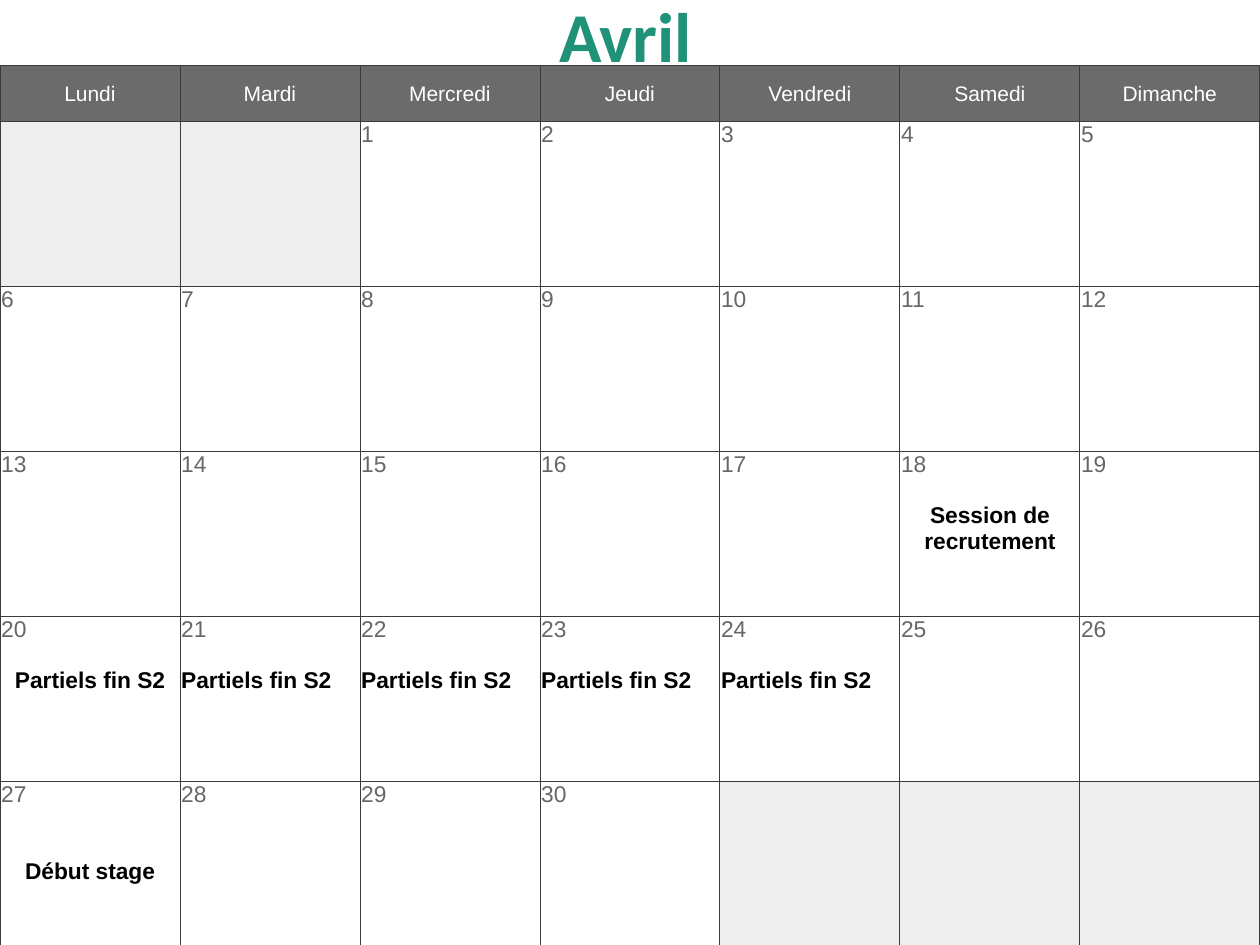
"""Build a one-slide monthly calendar for April."""
import lxml.etree
import pptx
import pptx.dml.color
import pptx.enum.text
import pptx.oxml.ns
import pptx.util

Inches = pptx.util.Inches
Pt = pptx.util.Pt
ALIGN = pptx.enum.text.PP_ALIGN
ANCHOR = pptx.enum.text.MSO_ANCHOR
COLORS = {
    "title": "209277",
    "header": "6B6B6B",
    "header_text": "FFFFFF",
    "day": "FFFFFF",
    "outside": "EEEEEE",
    "number": "676767",
    "event": "000000",
    "border": "3B3B3B",
}
WEEKDAYS = ["Lundi", "Mardi", "Mercredi", "Jeudi", "Vendredi", "Samedi", "Dimanche"]
WEEKS = 5
FIRST_COLUMN = 2
LAST_DAY = 30
LINE_HEIGHT = 14.5
EVENTS = {
    18: ("Session de recrutement", ALIGN.CENTER, 1),
    20: ("Partiels fin S2", ALIGN.CENTER, 1),
    **{day: ("Partiels fin S2", ALIGN.LEFT, 1) for day in range(21, 25)},
    27: ("Début stage", ALIGN.CENTER, 2),
}


def rgb(name):
    return pptx.dml.color.RGBColor.from_string(COLORS[name])


def add_run(paragraph, text, size, color, bold=False, font="Arial"):
    run = paragraph.add_run()
    run.text = text
    run.font.name = font
    run.font.size = Pt(size)
    run.font.bold = bold
    run.font.color.rgb = rgb(color)


def add_title(slide, text):
    title = slide.shapes.title
    title.left, title.top = Inches(4.33), Inches(-0.11)
    title.width, title.height = Inches(1.27), Inches(0.77)
    frame = title.text_frame
    frame.word_wrap = False
    frame.auto_size = pptx.enum.text.MSO_AUTO_SIZE.SHAPE_TO_FIT_TEXT
    frame.vertical_anchor = ANCHOR.TOP
    paragraph = frame.paragraphs[0]
    paragraph.alignment = ALIGN.CENTER
    add_run(paragraph, text, 40, "title", True, "Calibri")


def set_borders(cell):
    properties = cell._tc.get_or_add_tcPr()
    qn = pptx.oxml.ns.qn
    for index, side in enumerate(("lnL", "lnR", "lnT", "lnB")):
        line = lxml.etree.Element(qn(f"a:{side}"), w=str(Pt(0.5)))
        fill = lxml.etree.SubElement(line, qn("a:solidFill"))
        lxml.etree.SubElement(fill, qn("a:srgbClr"), val=COLORS["border"])
        properties.insert(index, line)


def format_cell(cell, fill):
    cell.margin_left = cell.margin_right = cell.margin_top = Inches(0.01)
    cell.margin_bottom = 0
    cell.fill.solid()
    cell.fill.fore_color.rgb = rgb(fill)
    set_borders(cell)


def fill_header(cell, weekday):
    format_cell(cell, "header")
    cell.vertical_anchor = ANCHOR.MIDDLE
    paragraph = cell.text_frame.paragraphs[0]
    paragraph.alignment = ALIGN.CENTER
    add_run(paragraph, weekday, 12, "header_text")


def fill_day(cell, day):
    if not 1 <= day <= LAST_DAY:
        format_cell(cell, "outside")
        return
    format_cell(cell, "day")
    add_run(cell.text_frame.paragraphs[0], str(day), 13, "number")
    if day in EVENTS:
        text, alignment, lines_above = EVENTS[day]
        paragraph = cell.text_frame.add_paragraph()
        paragraph.alignment = alignment
        paragraph.space_before = Pt(lines_above * LINE_HEIGHT)
        add_run(paragraph, text, 13, "event", True)


def add_calendar(slide):
    columns = len(WEEKDAYS)
    table = slide.shapes.add_table(
        WEEKS + 1, columns, 0, Inches(0.52), Inches(10), Inches(7)
    ).table
    table.rows[0].height = Inches(0.44)
    for column, weekday in enumerate(WEEKDAYS):
        fill_header(table.cell(0, column), weekday)
    for week in range(WEEKS):
        table.rows[week + 1].height = Inches(1.31)
        for column in range(columns):
            day = week * columns + column - FIRST_COLUMN + 1
            fill_day(table.cell(week + 1, column), day)


def main():
    presentation = pptx.Presentation()
    presentation.slide_width, presentation.slide_height = Inches(10), Inches(7.5)
    slide = presentation.slides.add_slide(presentation.slide_layouts[5])
    add_calendar(slide)
    add_title(slide, "Avril")
    presentation.save("out.pptx")


if __name__ == "__main__":
    main()
